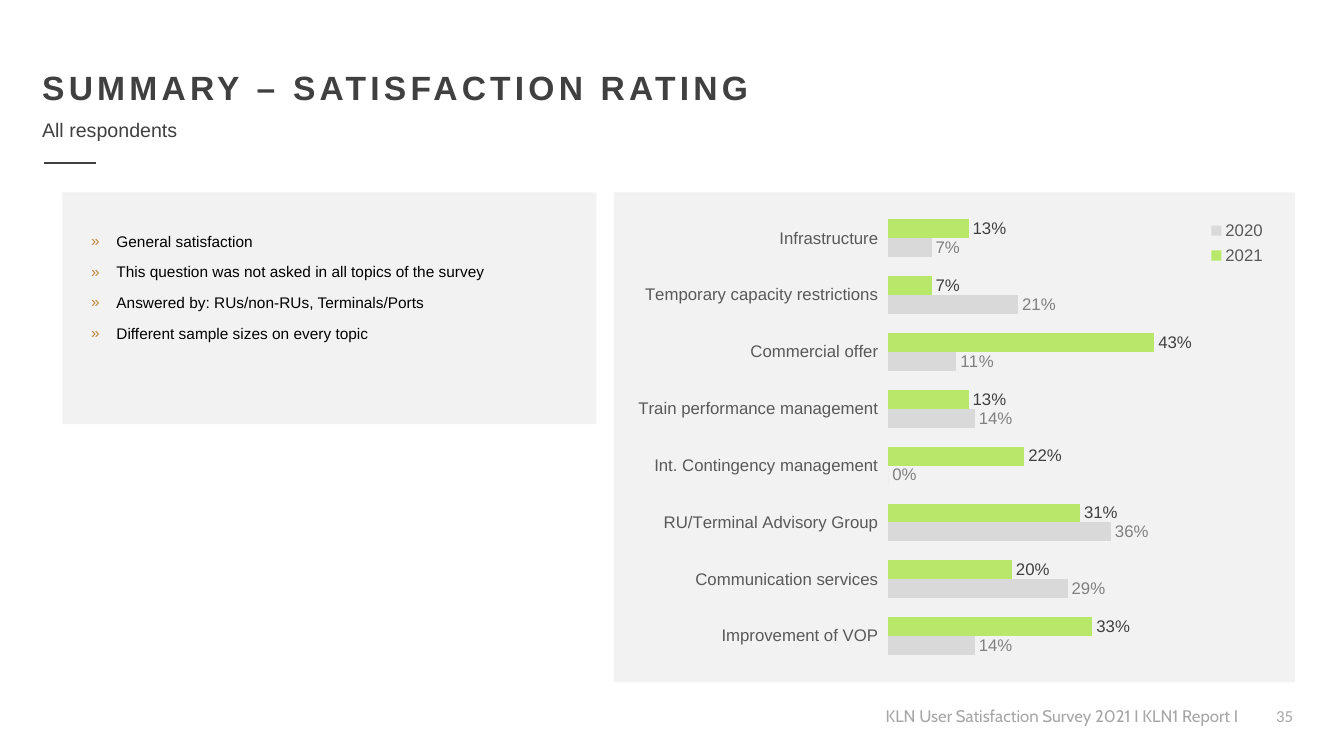
from lxml import etree
from pptx import Presentation
from pptx.chart.data import CategoryChartData
from pptx.dml.color import RGBColor
from pptx.enum.chart import XL_CHART_TYPE, XL_LABEL_POSITION, XL_LEGEND_POSITION, XL_TICK_MARK
from pptx.enum.shapes import MSO_CONNECTOR, MSO_SHAPE
from pptx.enum.text import MSO_ANCHOR, PP_ALIGN
from pptx.oxml import parse_xml
from pptx.oxml.ns import qn
from pptx.util import Cm, Pt

BARS = XL_CHART_TYPE.BAR_CLUSTERED
OUTER = XL_LABEL_POSITION.OUTSIDE_END
SIDE = XL_LEGEND_POSITION.RIGHT
TICK = XL_TICK_MARK.OUTSIDE
RECT = MSO_SHAPE.RECTANGLE
LINE = MSO_CONNECTOR.STRAIGHT
TOP = MSO_ANCHOR.TOP
LEFT, RIGHT = PP_ALIGN.LEFT, PP_ALIGN.RIGHT

COLORS = {
    "panel": "F2F2F2", "dark": "404040", "axis": "595959", "mid": "808080",
    "foot": "A6A6A6", "black": "000000", "bullet": "BF873D",
    "green": "B8E86A", "grey": "D9D9D9",
}
POINTS = [
    "General satisfaction",
    "This question was not asked in all topics of the survey",
    "Answered by: RUs/non-RUs, Terminals/Ports",
    "Different sample sizes on every topic",
]
TOPICS = [
    "Infrastructure", "Temporary capacity restrictions", "Commercial offer",
    "Train performance management", "Int. Contingency management",
    "RU/Terminal Advisory Group", "Communication services", "Improvement of VOP",
]
# year, values, bar colour, label colour
SERIES = [
    ("2021", [0.13, 0.07, 0.43, 0.13, 0.22, 0.31, 0.2, 0.33], "green", "dark"),
    ("2020", [0.07, 0.21, 0.11, 0.14, 0, 0.36, 0.29, 0.14], "grey", "mid"),
]


def rgb(name):
    return RGBColor.from_string(COLORS[name])


def style(font, size, color, face="Arial", bold=False):
    font.size, font.name, font.bold = Pt(size), face, bold
    font.color.rgb = rgb(color)


def place(shape, box):
    shape.left, shape.top, shape.width, shape.height = (Cm(n) for n in box)


def add_text(slide, box, text, size, color, face="Arial", align=LEFT):
    frame = slide.shapes.add_textbox(*(Cm(n) for n in box)).text_frame
    frame.text = text
    para = frame.paragraphs[0]
    para.alignment = align
    style(para.runs[0].font, size, color, face)


def add_panel(slide, box):
    """Draw a plain panel behind everything else."""
    panel = slide.shapes.add_shape(RECT, *(Cm(n) for n in box))
    panel.shadow.inherit = False
    panel.fill.solid()
    panel.fill.fore_color.rgb = rgb("panel")
    panel.line.fill.background()
    slide.shapes.title.element.addprevious(panel.element)


def add_rule(slide, left, right, top):
    rule = slide.shapes.add_connector(LINE, Cm(left), Cm(top), Cm(right), Cm(top))
    rule.line.color.rgb = rgb("dark")
    rule.line.width = Pt(1.5)
    etree.SubElement(rule.element.spPr, qn("a:effectLst"))


def set_title(title, box, text):
    place(title, box)
    frame = title.text_frame
    frame.text = text
    frame.word_wrap = True
    para = frame.paragraphs[0]
    para.alignment = LEFT
    run = para.runs[0]
    style(run.font, 24, "dark", bold=True)
    run.font._element.set("spc", "300")


def add_bullet(para):
    props = para._p.get_or_add_pPr()
    props.set("marL", str(Cm(0.64)))
    props.set("indent", str(-Cm(0.64)))
    color = etree.SubElement(props, qn("a:buClr"))
    etree.SubElement(color, qn("a:srgbClr"), val=COLORS["bullet"])
    etree.SubElement(props, qn("a:buFont"), typeface="Arial")
    etree.SubElement(props, qn("a:buChar"), char="»")


def set_list(body, box, items):
    place(body, box)
    frame = body.text_frame
    frame.text = "\n".join(items)
    frame.vertical_anchor = TOP
    for para in frame.paragraphs:
        para.alignment = LEFT
        para.line_spacing = 0.9
        para.space_before = Pt(10)
        style(para.runs[0].font, 11, "black")
        add_bullet(para)


def set_layout(part, x, y, w, h, inner=False):
    """Fix a chart part's place, in shares of the chart area."""
    old = part.find(qn("c:layout"))
    if old is not None:
        part.remove(old)
    target = '<c:layoutTarget val="inner"/>' if inner else ""
    sizes = "".join(f'<c:{k} val="{v}"/>' for k, v in zip("xywh", (x, y, w, h)))
    layout = parse_xml(
        '<c:layout xmlns:c="http://schemas.openxmlformats.org/drawingml/2006/chart">'
        f'<c:manualLayout>{target}<c:xMode val="edge"/><c:yMode val="edge"/>'
        f"{sizes}</c:manualLayout></c:layout>")
    if inner:
        part.insert(0, layout)
    else:
        part.find(qn("c:legendPos")).addnext(layout)


def style_bars(series, fill, label):
    series.format.fill.solid()
    series.format.fill.fore_color.rgb = rgb(fill)
    labels = series.data_labels
    labels.show_value = True
    labels.position = OUTER
    labels.number_format, labels.number_format_is_linked = "0%", False
    style(labels.font, 12, label)


def add_bars(slide, box):
    data = CategoryChartData(number_format="0%")
    data.categories = TOPICS
    for year, values, *_ in SERIES:
        data.add_series(year, values)
    chart = slide.shapes.add_chart(BARS, *(Cm(n) for n in box), data).chart
    chart.has_title = False
    style(chart.font, 10, "black")

    plot = chart.plots[0]
    plot.gap_width, plot.overlap = 100, 0
    plot.vary_by_categories = False
    for series, (_, _, fill, label) in zip(plot.series, SERIES):
        style_bars(series, fill, label)

    topics = chart.category_axis
    topics.reverse_order = True
    topics.major_tick_mark = TICK
    topics.format.line.fill.background()
    style(topics.tick_labels.font, 12, "axis")
    scale = chart.value_axis
    scale.minimum_scale, scale.maximum_scale = 0, 0.5
    scale.has_major_gridlines = False
    scale.visible = False

    chart.has_legend = True
    legend = chart.legend
    legend.position = SIDE
    legend.include_in_layout = False
    style(legend.font, 12, "axis")
    set_layout(legend._element, 0.88, 0.03, 0.1, 0.12)
    set_layout(chart._chartSpace.chart.plotArea, 0.4, 0.02, 0.47, 0.96, inner=True)


def main():
    deck = Presentation()
    deck.slide_width, deck.slide_height = Cm(33.87), Cm(19.05)
    slide = deck.slides.add_slide(deck.slide_layouts[1])
    title, body = slide.placeholders
    add_panel(slide, (15.47, 4.85, 17.17, 12.34))
    add_panel(slide, (1.57, 4.85, 13.46, 5.84))
    set_title(title, (0.81, 1.55, 29.64, 1.27), "SUMMARY – SATISFACTION RATING")
    add_text(slide, (0.81, 2.84, 3.94, 0.86), "All respondents", 14, "dark")
    add_rule(slide, 1.12, 2.41, 4.1)
    set_list(body, (2.04, 5.77, 12.57, 2.08), POINTS)
    add_bars(slide, (15.75, 5.05, 16.59, 11.94))
    add_text(slide, (22.07, 17.65, 9.45, 0.76),
             "KLN User Satisfaction Survey 2021 I KLN1 Report I", 12, "foot", "Cabin")
    add_text(slide, (31.27, 17.65, 1.57, 1.02), "35", 12, "foot", "Calibri", RIGHT)
    deck.save("out.pptx")


if __name__ == "__main__":
    main()
